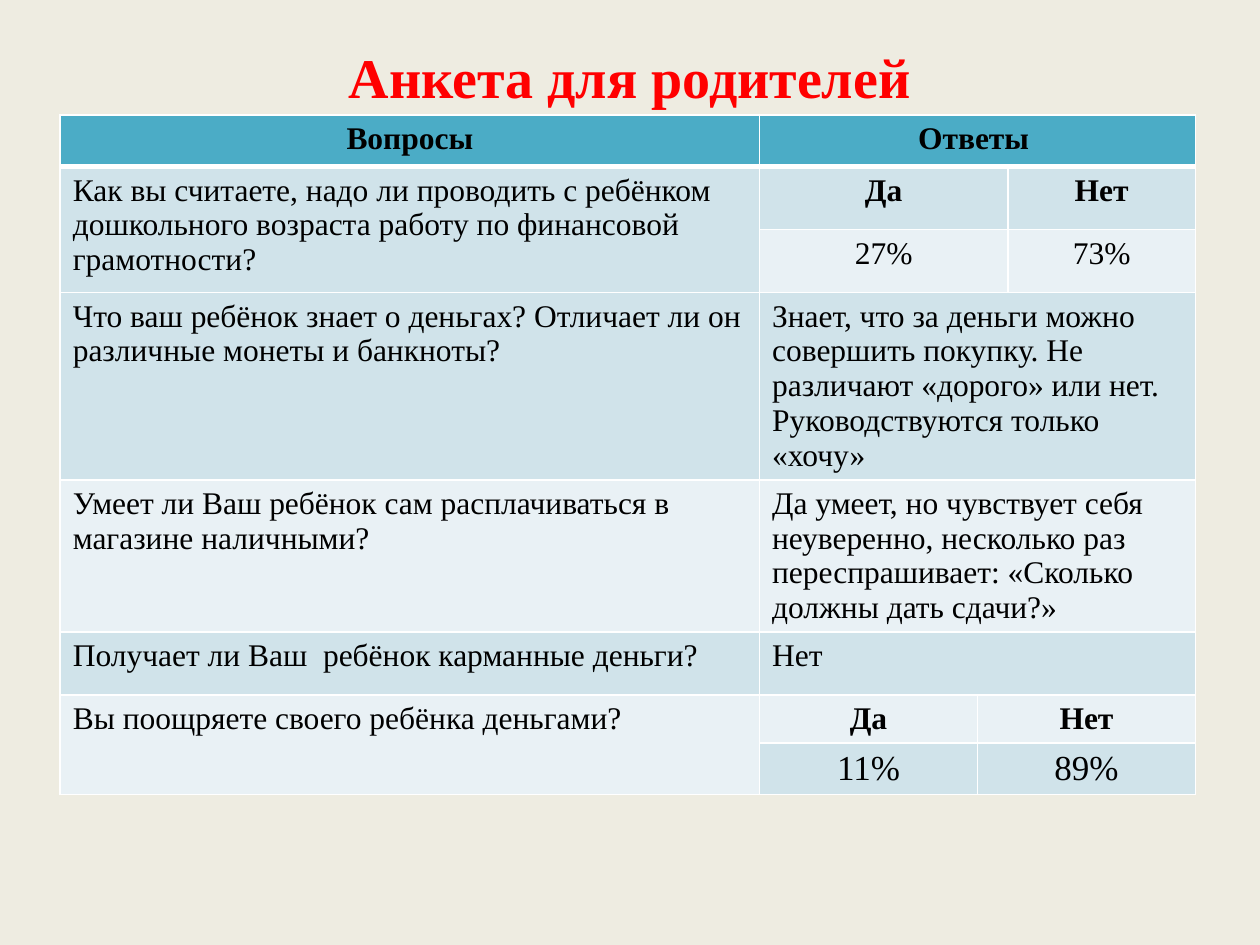
from lxml.etree import SubElement
from pptx import Presentation
from pptx.dml.color import RGBColor
from pptx.enum.text import MSO_ANCHOR, PP_ALIGN
from pptx.oxml.ns import qn
from pptx.util import Pt

FONT = "Times New Roman"
CREAM = RGBColor(0xEE, 0xEC, 0xE1)
RED = RGBColor(0xFF, 0x00, 0x00)
BLACK = RGBColor(0x00, 0x00, 0x00)
WHITE = RGBColor(0xFF, 0xFF, 0xFF)
TEAL = RGBColor(0x4B, 0xAC, 0xC6)
BANDS = [RGBColor(0xE9, 0xF1, 0xF5), RGBColor(0xD0, 0xE3, 0xEA)]

WIDTHS = [399.6, 124.6, 17.3, 107.3]
HEIGHTS = [29.5, 36, 36, 107, 87, 36, 27.5, 29.5]
MERGES = [
    (0, 1, 0, 3), (1, 0, 2, 0), (1, 1, 1, 2), (2, 1, 2, 2), (3, 1, 3, 3),
    (4, 1, 4, 3), (5, 1, 5, 3), (6, 0, 7, 0), (6, 2, 6, 3), (7, 2, 7, 3),
]
QUESTIONS = {
    1: "Как вы считаете, надо ли проводить с ребёнком дошкольного возраста работу по финансовой грамотности?",
    3: "Что ваш ребёнок знает о деньгах? Отличает ли он различные монеты и банкноты?",
    4: "Умеет ли Ваш ребёнок сам расплачиваться в магазине наличными?",
    5: "Получает ли Ваш  ребёнок карманные деньги?",
    6: "Вы поощряете своего ребёнка деньгами?",
}
REPLIES = {
    3: "Знает, что за деньги можно совершить покупку. Не различают «дорого» или нет. Руководствуются только «хочу»",
    4: "Да умеет, но чувствует себя неуверенно, несколько раз переспрашивает: «Сколько должны дать сдачи?»",
    5: "Нет",
}
HEADS = {(0, 0): "Вопросы", (0, 1): "Ответы ", (1, 1): "Да",
         (1, 3): "Нет", (6, 1): "Да", (6, 2): "Нет"}
SHARES = {(2, 1): ("27%", 18), (2, 3): ("73%", 18),
          (7, 1): ("11%", 20), (7, 2): ("89%", 20)}


def write(frame, text, size, color=BLACK, bold=False, align=PP_ALIGN.LEFT):
    """Put one formatted paragraph into a text frame."""
    frame.text = text
    para = frame.paragraphs[0]
    para.alignment = align
    font = para.runs[0].font
    font.name, font.size, font.bold = FONT, Pt(size), bold
    font.color.rgb = color


def edge(cell, side, width):
    """Draw a white border on one side of a cell."""
    props = cell._tc.get_or_add_tcPr()
    line = SubElement(props, qn("a:ln" + side), w=str(Pt(width)))
    fill = SubElement(line, qn("a:solidFill"))
    SubElement(fill, qn("a:srgbClr"), val=str(WHITE))


def paint(grid):
    """Give every cell its borders and banded fill."""
    for row in range(len(HEIGHTS)):
        for col in range(len(WIDTHS)):
            cell = grid.cell(row, col)
            for side in "LRTB":
                thick = (row, side) in [(0, "B"), (1, "T")]
                edge(cell, side, 3 if thick else 1)
            cell.fill.solid()
            cell.fill.fore_color.rgb = BANDS[row % 2] if row else TEAL


def add_title(slide, left, top, width, height):
    """Place the heading in the title placeholder."""
    title = slide.shapes.title
    title.left, title.top = Pt(left), Pt(top)
    title.width, title.height = Pt(width), Pt(height)
    frame = title.text_frame
    frame.vertical_anchor = MSO_ANCHOR.MIDDLE
    write(frame, "Анкета для родителей", 32, RED, True, PP_ALIGN.CENTER)


def add_survey(slide, left, top, width, height):
    """Place the table of questions and answers."""
    shape = slide.shapes.add_table(len(HEIGHTS), len(WIDTHS), Pt(left),
                                   Pt(top), Pt(width), Pt(height))
    grid = shape.table
    for col, size in zip(grid.columns, WIDTHS):
        col.width = Pt(size)
    for row, size in zip(grid.rows, HEIGHTS):
        row.height = Pt(size)
    paint(grid)
    for top_row, first, low_row, last in MERGES:
        grid.cell(top_row, first).merge(grid.cell(low_row, last))
    for col, texts in enumerate([QUESTIONS, REPLIES]):
        for row, text in texts.items():
            write(grid.cell(row, col).text_frame, text, 18)
    for spot, text in HEADS.items():
        write(grid.cell(*spot).text_frame, text, 18, bold=True,
              align=PP_ALIGN.CENTER)
    for spot, (text, size) in SHARES.items():
        write(grid.cell(*spot).text_frame, text, size, align=PP_ALIGN.CENTER)


def main():
    """Build and save the deck."""
    deck = Presentation()
    deck.slide_width, deck.slide_height = Pt(720), Pt(540)
    slide = deck.slides.add_slide(deck.slide_layouts[5])
    slide.background.fill.solid()
    slide.background.fill.fore_color.rgb = CREAM
    add_title(slide, 36, 21.6, 648, 44)
    add_survey(slide, 34.4, 65.7, sum(WIDTHS), sum(HEIGHTS))
    deck.save("out.pptx")


if __name__ == "__main__":
    main()
